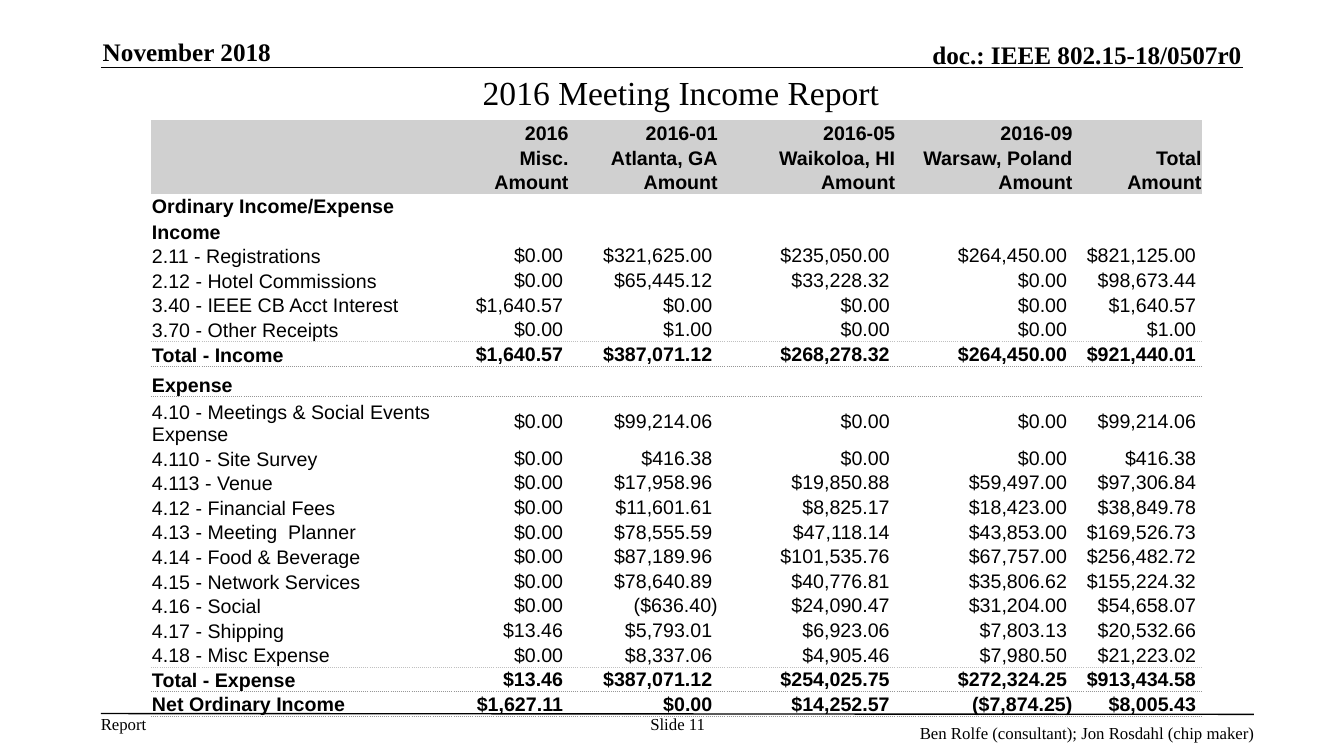
from dataclasses import dataclass

from lxml.etree import SubElement
from pptx import Presentation
from pptx.dml.color import RGBColor
from pptx.enum.shapes import MSO_CONNECTOR
from pptx.enum.text import MSO_ANCHOR, MSO_AUTO_SIZE, PP_ALIGN
from pptx.oxml.ns import qn
from pptx.util import Cm, Pt

BLACK = RGBColor(0x00, 0x00, 0x00)
HEADER_GREY = RGBColor(0xD0, 0xD0, 0xD0)
RULE_LIGHT = RGBColor(0xC0, 0xC0, 0xC0)
RULE_DARK = RGBColor(0x96, 0x96, 0x96)
SERIF, SANS = "Times New Roman", "Arial"
LEFT, CENTER, RIGHT = PP_ALIGN.LEFT, PP_ALIGN.CENTER, PP_ALIGN.RIGHT
TOP, MIDDLE, BOTTOM = MSO_ANCHOR.TOP, MSO_ANCHOR.MIDDLE, MSO_ANCHOR.BOTTOM
TABLE_SIZE = 14
NO_GRID_STYLE = "{2D5ABB26-0587-4C30-8999-92F81FD0307C}"


@dataclass(frozen=True)
class Label:
    """A line of header or footer text; lengths in cm."""
    text: str
    left: float
    top: float
    width: float
    height: float
    size: int = 12
    bold: bool = False
    align: PP_ALIGN = LEFT
    anchor: MSO_ANCHOR = TOP
    wrap: bool = True


@dataclass(frozen=True)
class Row:
    """A body row of the report; rules are the colours above and below it."""
    name: str
    amounts: tuple[float, ...] = ()
    bold: bool = False
    above: RGBColor | None = None
    below: RGBColor | None = None
    height: float = 0.62
    anchor: MSO_ANCHOR = BOTTOM


LABELS = [
    Label("Report", 2.54, 17.98, 1.17, 0.51, wrap=False),
    Label("doc.: IEEE 802.15-18/0507r0", 13.26, 0.99, 18.03, 0.76, 18, True, RIGHT, BOTTOM),
    Label("November 2018", 2.59, 0.91, 6.93, 0.76, 18, True, anchor=BOTTOM),
    Label("Ben Rolfe (consultant); Jon Rosdahl (chip maker)", 20.29, 18.21, 11.33, 0.51, align=RIGHT),
    Label("Slide 11", 16.1, 17.98, 1.96, 1.02, align=CENTER),
]

COLUMN_WIDTHS = (7.29, 3.25, 3.76, 4.47, 4.47, 3.25)
HEADER_HEIGHT = 0.62
HEADER = [
    ("", "2016", "2016-01", "2016-05", "2016-09", "Total"),
    ("", "Misc.", "Atlanta, GA", "Waikoloa, HI", "Warsaw, Poland", ""),
    ("", "Amount", "Amount", "Amount", "Amount", "Amount"),
]
ROWS = [
    Row("Ordinary Income/Expense", bold=True, anchor=MIDDLE),
    Row("Income", bold=True),
    Row("2.11 - Registrations", (0, 321625, 235050, 264450, 821125)),
    Row("2.12 - Hotel Commissions", (0, 65445.12, 33228.32, 0, 98673.44)),
    Row("3.40 - IEEE CB Acct Interest", (1640.57, 0, 0, 0, 1640.57)),
    Row("3.70 - Other Receipts", (0, 1, 0, 0, 1), below=RULE_LIGHT),
    Row("Total - Income", (1640.57, 387071.12, 268278.32, 264450, 921440.01),
        True, RULE_LIGHT, RULE_DARK),
    Row("Expense", bold=True, above=RULE_DARK, height=0.76),
    Row("4.10 - Meetings & Social Events Expense", (0, 99214.06, 0, 0, 99214.06), height=1.24),
    Row("4.110 - Site Survey", (0, 416.38, 0, 0, 416.38)),
    Row("4.113 - Venue", (0, 17958.96, 19850.88, 59497, 97306.84)),
    Row("4.12 - Financial Fees", (0, 11601.61, 8825.17, 18423, 38849.78)),
    Row("4.13 - Meeting  Planner", (0, 78555.59, 47118.14, 43853, 169526.73)),
    Row("4.14 - Food & Beverage", (0, 87189.96, 101535.76, 67757, 256482.72)),
    Row("4.15 - Network Services", (0, 78640.89, 40776.81, 35806.62, 155224.32)),
    Row("4.16 - Social", (0, -636.4, 24090.47, 31204, 54658.07)),
    Row("4.17 - Shipping", (13.46, 5793.01, 6923.06, 7803.13, 20532.66)),
    Row("4.18 - Misc Expense", (0, 8337.06, 4905.46, 7980.5, 21223.02), below=RULE_LIGHT),
    Row("Total - Expense", (13.46, 387071.12, 254025.75, 272324.25, 913434.58),
        True, RULE_LIGHT, RULE_DARK),
    Row("Net Ordinary Income", (1627.11, 0, 14252.57, -7874.25, 8005.43),
        True, RULE_DARK, RULE_DARK, anchor=MIDDLE),
]


def add_run(p, text: str, font: str, size: int, bold: bool = False) -> None:
    r = p.add_run()
    r.text = text
    r.font.name, r.font.size, r.font.bold = font, Pt(size), bold
    r.font.color.rgb = BLACK


def add_label(slide, label: Label) -> None:
    sp = slide.shapes.add_textbox(Cm(label.left), Cm(label.top), Cm(label.width), Cm(label.height))
    tf = sp.text_frame
    tf.margin_left = tf.margin_right = tf.margin_top = tf.margin_bottom = 0
    tf.word_wrap, tf.vertical_anchor = label.wrap, label.anchor
    p = tf.paragraphs[0]
    p.alignment = label.align
    add_run(p, label.text, SERIF, label.size, label.bold)


def add_rule(slide, x1: float, y1: float, x2: float, y2: float) -> None:
    line = slide.shapes.add_connector(MSO_CONNECTOR.STRAIGHT, Cm(x1), Cm(y1), Cm(x2), Cm(y2))
    line.line.color.rgb = BLACK
    line.line.width = Pt(1)
    SubElement(line._element.spPr, qn("a:effectLst"))


def add_border(cell, side: str, color: RGBColor) -> None:
    ln = SubElement(cell._tc.get_or_add_tcPr(), qn(f"a:{side}"), w=str(Pt(0.5)))
    fill = SubElement(ln, qn("a:solidFill"))
    SubElement(fill, qn("a:srgbClr"), val=str(color))
    SubElement(ln, qn("a:prstDash"), val="sysDot")


def fill_cell(cell, text: str, bold: bool, align: PP_ALIGN, anchor: MSO_ANCHOR) -> None:
    cell.margin_left = cell.margin_right = cell.margin_top = Cm(0.02)
    cell.margin_bottom = 0
    cell.vertical_anchor = anchor
    p = cell.text_frame.paragraphs[0]
    p.alignment = align
    if text:
        add_run(p, text, SANS, TABLE_SIZE, bold)
    else:
        SubElement(p._p, qn("a:endParaRPr"), sz=str(TABLE_SIZE * 100))


def money(amount: float) -> str:
    # The space lines positive amounts up with those in parentheses
    return f"(${-amount:,.2f})" if amount < 0 else f"${amount:,.2f} "


def add_report(slide) -> None:
    heights = [HEADER_HEIGHT] * len(HEADER) + [row.height for row in ROWS]
    frame = slide.shapes.add_table(len(heights), len(COLUMN_WIDTHS), Cm(3.81), Cm(3.03),
                                   Cm(sum(COLUMN_WIDTHS)), Cm(sum(heights)))
    table = frame.table
    table.first_row = table.horz_banding = False
    table._tbl.tblPr.find(qn("a:tableStyleId")).text = NO_GRID_STYLE
    for column, width in zip(table.columns, COLUMN_WIDTHS):
        column.width = Cm(width)
    for table_row, height in zip(table.rows, heights):
        table_row.height = Cm(height)

    # Column headings
    for i, headings in enumerate(HEADER):
        for j, heading in enumerate(headings):
            cell = table.cell(i, j)
            fill_cell(cell, heading, True, RIGHT, BOTTOM)
            cell.fill.solid()
            cell.fill.fore_color.rgb = HEADER_GREY
    for j in (0, len(COLUMN_WIDTHS) - 1):
        table.cell(0, j).merge(table.cell(1, j))
        table.cell(0, j).vertical_anchor = BOTTOM

    # Income and expense rows
    for i, row in enumerate(ROWS, len(HEADER)):
        amounts = [money(amount) for amount in row.amounts] or [""] * (len(COLUMN_WIDTHS) - 1)
        for j, text in enumerate([row.name, *amounts]):
            cell = table.cell(i, j)
            fill_cell(cell, text, row.bold, RIGHT if j else LEFT, MIDDLE if j else row.anchor)
            for side, color in (("lnT", row.above), ("lnB", row.below)):
                if color is not None:
                    add_border(cell, side, color)
            cell.fill.background()


def main() -> None:
    prs = Presentation()
    prs.slide_width, prs.slide_height = Cm(33.87), Cm(19.05)
    slide = prs.slides.add_slide(prs.slide_layouts[5])

    # Title
    title = slide.shapes.title
    title.left, title.top, title.width, title.height = Cm(6.35), Cm(1.68), Cm(21.62), Cm(1.27)
    tf = title.text_frame
    tf.auto_size, tf.vertical_anchor, tf.word_wrap = MSO_AUTO_SIZE.NONE, TOP, True
    p = tf.paragraphs[0]
    p.alignment = CENTER
    add_run(p, "2016 Meeting Income Report", SERIF, 24)

    # Header and footer
    add_rule(slide, 2.54, 1.7, 31.32, 1.7)
    add_rule(slide, 2.54, 17.98, 31.6, 18)
    for label in LABELS:
        add_label(slide, label)

    # Report table
    add_report(slide)
    prs.save("out.pptx")


if __name__ == "__main__":
    main()
